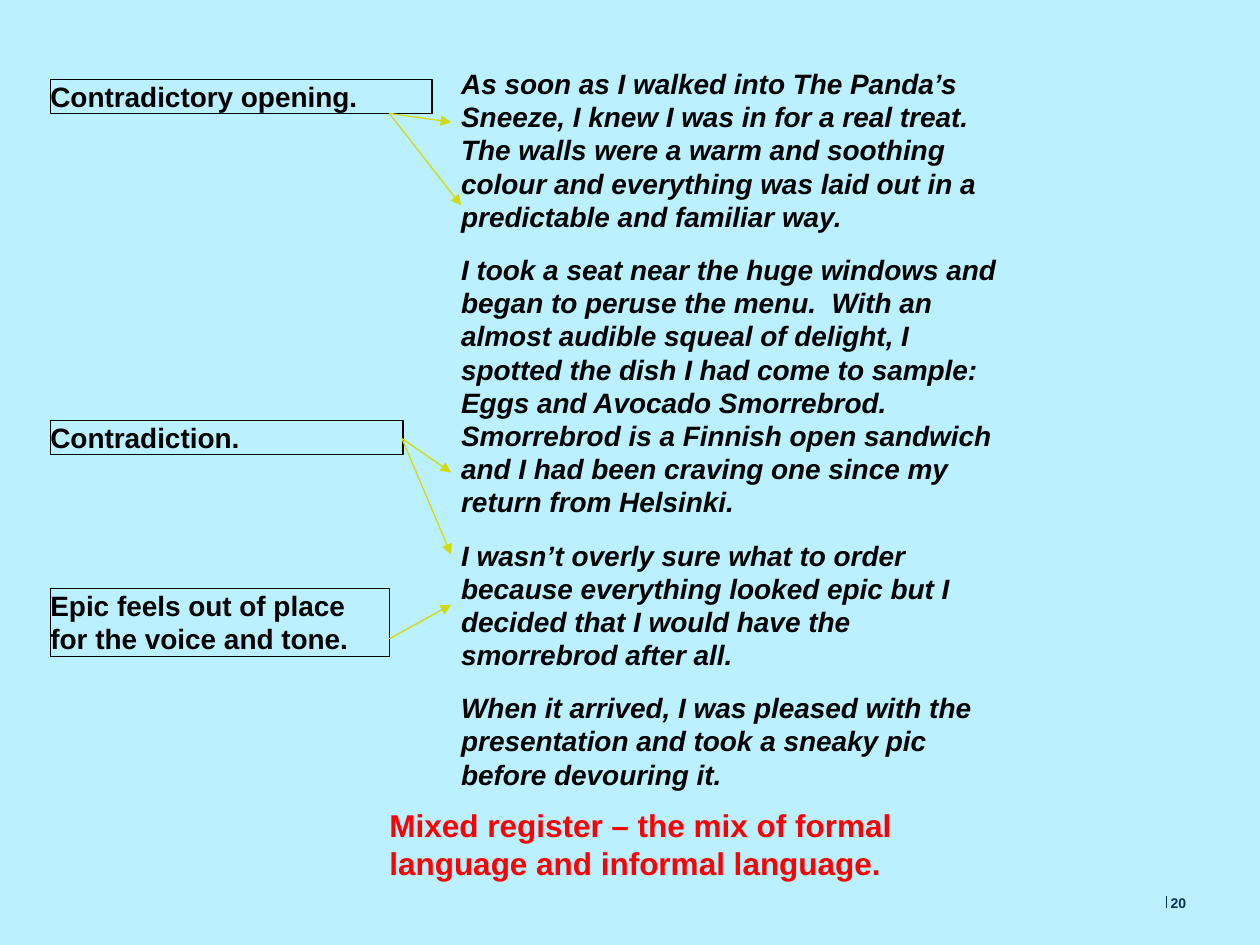
import pptx
import pptx.util
import pptx.dml.color
import pptx.enum.shapes
import pptx.enum.text
import pptx.oxml.ns
import lxml.etree

Inches, Pt = pptx.util.Inches, pptx.util.Pt
COLOURS = {"back": "BAF0FF", "text": "000000", "arrow": "D2DB09",
           "red": "FF0000", "navy": "003057"}

REVIEW = [
    "As soon as I walked into The Panda’s Sneeze, I knew I was in for a real treat.  "
    "The walls were a warm and soothing colour and everything was laid out in a "
    "predictable and familiar way.",
    "I took a seat near the huge windows and began to peruse the menu.  With an almost "
    "audible squeal of delight, I spotted the dish I had come to sample: Eggs and Avocado "
    "Smorrebrod. Smorrebrod is a Finnish open sandwich and I had been craving one since my "
    "return from Helsinki.",
    "I wasn’t overly sure what to order because everything looked epic but I decided that "
    "I would have the smorrebrod after all.",
    "When it arrived, I was pleased with the presentation and took a sneaky pic before "
    "devouring it.",
]
# text, top, width, height, arrow start, arrow ends
NOTES = [
    ("Contradictory opening.", 0.63, 3.03, 0.27, (3.09, 0.9), [(3.66, 1.63), (3.58, 0.97)]),
    ("Contradiction.", 3.34, 2.8, 0.27, (3.19, 3.48), [(3.58, 3.75), (3.58, 4.4)]),
    ("Epic feels out of place for the voice and tone.", 4.67, 2.69, 0.54,
     (3.09, 5.07), [(3.58, 4.8)]),
]
NOTE_LEFT = 0.4
SUMMARY = "Mixed register – the mix of formal language and informal language."


def rgb(name):
    return pptx.dml.color.RGBColor.from_string(COLOURS[name])


def write(shape, texts, size, colour="text", italic=False):
    """Fill a shape with bold, left-aligned paragraphs and no margins."""
    frame = shape.text_frame
    frame.word_wrap = True
    frame.margin_left = frame.margin_right = frame.margin_top = frame.margin_bottom = 0
    frame.vertical_anchor = pptx.enum.text.MSO_ANCHOR.TOP
    frame.text = "\n".join(texts)
    for para in frame.paragraphs:
        para.alignment = pptx.enum.text.PP_ALIGN.LEFT
        for run in para.runs:
            font = run.font
            font.name, font.size, font.bold, font.italic = "Arial", Pt(size), True, italic
            font.color.rgb = rgb(colour)
    return frame


def add_text(slide, place, texts, size, colour="text", italic=False):
    box = slide.shapes.add_textbox(*map(Inches, place))
    return write(box, texts, size, colour, italic)


def add_line(slide, start, end, colour, width, arrow=False):
    line = slide.shapes.add_connector(
        pptx.enum.shapes.MSO_CONNECTOR.STRAIGHT, *map(Inches, (*start, *end)))
    line.line.color.rgb = rgb(colour)
    line.line.width = Pt(width)
    qn = pptx.oxml.ns.qn
    if arrow:
        lxml.etree.SubElement(line.line._get_or_add_ln(), qn("a:tailEnd"), type="triangle")
    lxml.etree.SubElement(line._element.spPr, qn("a:effectLst"))


def add_note(slide, text, top, width, height, start, ends):
    box = slide.shapes.add_shape(pptx.enum.shapes.MSO_SHAPE.RECTANGLE,
                                 *map(Inches, (NOTE_LEFT, top, width, height)))
    box.shadow.inherit = False
    box.fill.background()
    box.line.color.rgb = rgb("text")
    box.line.width = Pt(0.75)
    write(box, [text], 16)
    for end in ends:
        add_line(slide, start, end, "arrow", 0.75, arrow=True)


def main():
    deck = pptx.Presentation()
    deck.slide_width, deck.slide_height = Inches(10), Inches(7.5)
    slide = deck.slides.add_slide(deck.slide_layouts[6])
    slide.background.fill.solid()
    slide.background.fill.fore_color.rgb = rgb("back")

    add_line(slide, (9.26, 7.11), (9.26, 7.21), "navy", 0.5)
    review = add_text(slide, (3.66, 0.53, 4.35, 4.14), REVIEW, 16, italic=True)
    for i, para in enumerate(review.paragraphs):
        para.line_spacing = Pt(19)
        para.space_before = Pt(11.3 if i else 0)
    number = add_text(slide, (9.29, 7.1, 0.47, 0.14), ["20"], 8, "navy")
    number.vertical_anchor = pptx.enum.text.MSO_ANCHOR.MIDDLE
    for note in NOTES:
        add_note(slide, *note)
    add_text(slide, (3.09, 6.4, 4.58, 0.61), [SUMMARY], 18, "red")
    deck.save("out.pptx")


if __name__ == "__main__":
    main()
